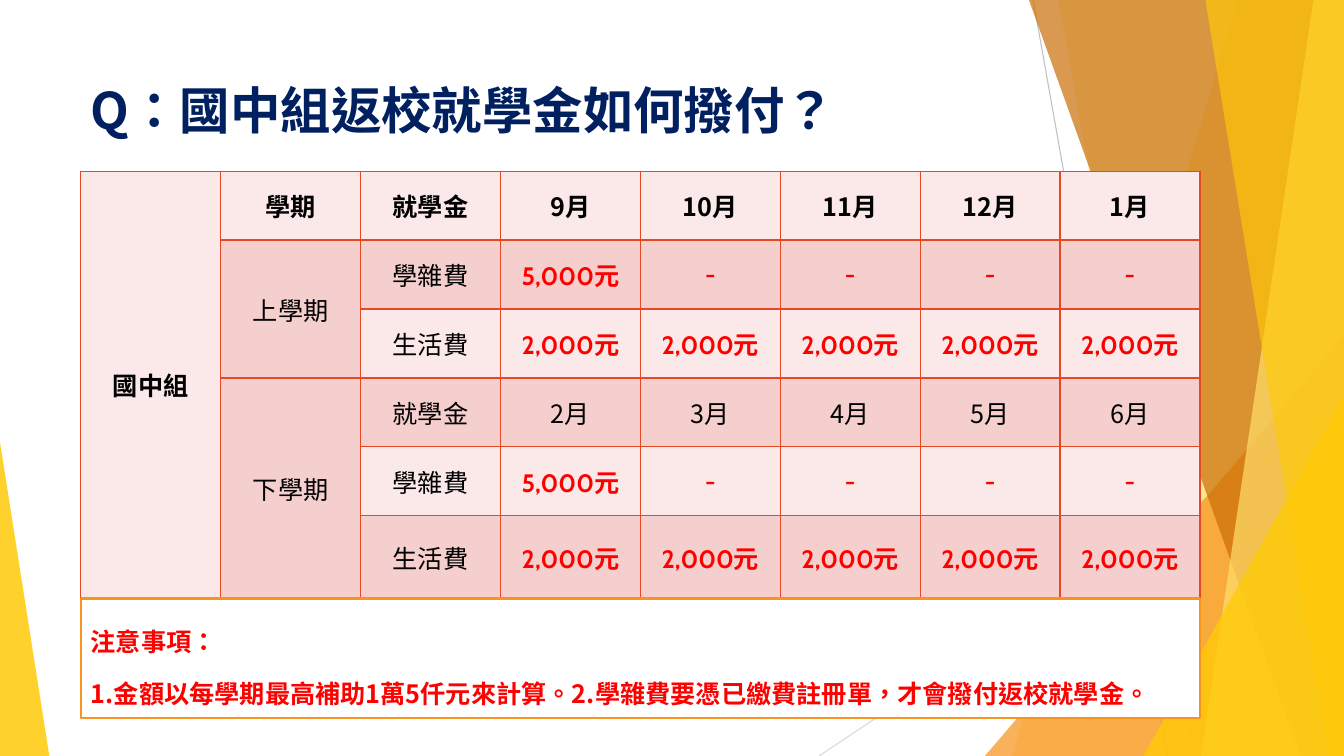
from dataclasses import dataclass
from typing import Any, NamedTuple

from lxml.etree import SubElement
from pptx import Presentation
from pptx.dml.color import RGBColor
from pptx.enum.shapes import MSO_CONNECTOR, MSO_SHAPE
from pptx.enum.text import MSO_ANCHOR, PP_ALIGN
from pptx.oxml.ns import qn
from pptx.util import Pt

EMU_PER_PX = 9525
SLIDE_WIDTH, SLIDE_HEIGHT = 1280, 720


@dataclass(frozen=True)
class Theme:
    font: str = "Noto Sans CJK SC"
    amount_font: str = "Cabin"
    white: str = "FFFFFF"
    black: str = "000000"
    navy: str = "002060"
    red: str = "FF0000"
    border: str = "E64823"
    band_light: str = "FAE9E8"
    band_dark: str = "F5CFCD"
    gold: str = "FFCA08"
    pale_gold: str = "FFDF6B"
    orange: str = "F8931D"
    brown: str = "CA6F06"
    title_size: int = 36
    body_size: int = 18


THEME = Theme()


class Ray(NamedTuple):
    start: tuple[int, int]
    end: tuple[int, int]
    color: str


class Band(NamedTuple):
    """Panel along the right edge, from its slanted left side to the slide edge."""
    top_x: int
    bottom_x: int
    color: str
    opacity: int


class Corner(NamedTuple):
    """Triangle standing on the bottom edge, apex at 0 (left) or 1 (right)."""
    left: int
    top: int
    width: int
    apex: int
    color: str
    opacity: int


DECORATION = [
    Ray((984, 0), (1112, 720), "BFBFBF"),
    Ray((1280, 387), (780, 720), "D9D9D9"),
    Band(1179, 964, THEME.gold, 30),
    Band(1008, 1136, THEME.gold, 20),
    Corner(938, 320, 342, 1, THEME.orange, 72),
    Band(980, 1239, THEME.brown, 70),
    Band(1251, 1144, THEME.pale_gold, 70),
    Band(1148, 1265, THEME.gold, 65),
    Corner(1089, 377, 191, 1, THEME.gold, 80),
    Corner(0, 421, 47, 0, THEME.gold, 85),
]

TITLE = "Q：國中組返校就學金如何撥付？"
TUITION = ["學雜費", "5,000元"] + ["-"] * 4
LIVING = ["生活費"] + ["2,000元"] * 5
GRANT_ROWS = [
    ["國中組", "學期", "就學金", "9月", "10月", "11月", "12月", "1月"],
    ["", "上學期", *TUITION],
    ["", "", *LIVING],
    ["", "下學期", "就學金", "2月", "3月", "4月", "5月", "6月"],
    ["", "", *TUITION],
    ["", "", *LIVING],
]
MERGES = [((0, 0), (5, 0)), ((1, 1), (2, 1)), ((3, 1), (5, 1))]
NOTES = [
    "注意事項：",
    "1.金額以每學期最高補助1萬5仟元來計算。2.學雜費要憑已繳費註冊單，才會撥付返校就學金。",
]
LEFT, WIDTH = 77, 1066
TABLE_TOP, TABLE_HEIGHT, LAST_ROW_HEIGHT = 163, 394, 79


def px(*lengths: int) -> list[int]:
    return [length * EMU_PER_PX for length in lengths]


def apply_format(target: Any, values: dict[str, Any]) -> None:
    for name, value in values.items():
        setattr(target, name, value)


def write(paragraph: Any, text: str, size: int, color: str, bold: bool,
          font: str = THEME.font) -> None:
    run = paragraph.add_run()
    run.text = text
    apply_format(run.font, {"name": font, "size": Pt(size), "bold": bold})
    run.font.color.rgb = RGBColor.from_string(color)
    properties = run.font._element
    properties.set("lang", "zh-TW")
    SubElement(properties, qn("a:ea"), typeface=THEME.font)


def fill_shape(shape: Any, color: str, opacity: int = 100) -> None:
    shape.shadow.inherit = False
    shape.fill.solid()
    shape.fill.fore_color.rgb = RGBColor.from_string(color)
    shape.line.fill.background()
    if opacity < 100:
        color_element = shape._element.spPr.find(qn("a:solidFill"))[0]
        SubElement(color_element, qn("a:alpha"), val=str(opacity * 1000))


def draw_ray(slide: Any, ray: Ray) -> None:
    connector = slide.shapes.add_connector(
        MSO_CONNECTOR.STRAIGHT, *px(*ray.start, *ray.end))
    connector.line.color.rgb = RGBColor.from_string(ray.color)
    connector.line.width = Pt(0.75)
    SubElement(connector._element.spPr, qn("a:effectLst"))


def draw_band(slide: Any, band: Band) -> None:
    builder = slide.shapes.build_freeform(band.top_x, 0, EMU_PER_PX)
    builder.add_line_segments([(SLIDE_WIDTH, 0), (SLIDE_WIDTH, SLIDE_HEIGHT),
                               (band.bottom_x, SLIDE_HEIGHT)])
    fill_shape(builder.convert_to_shape(), band.color, band.opacity)


def draw_corner(slide: Any, corner: Corner) -> None:
    shape = slide.shapes.add_shape(
        MSO_SHAPE.ISOSCELES_TRIANGLE,
        *px(corner.left, corner.top, corner.width, SLIDE_HEIGHT - corner.top))
    shape.adjustments[0] = corner.apex
    fill_shape(shape, corner.color, corner.opacity)


def draw_title(slide: Any) -> None:
    frame = slide.shapes.add_textbox(*px(LEFT, 71, 1104, 139)).text_frame
    frame.word_wrap = True
    write(frame.paragraphs[0], TITLE, THEME.title_size, THEME.navy, True)


def add_borders(cell: Any) -> None:
    properties = cell._tc.get_or_add_tcPr()
    for position, side in enumerate(("lnL", "lnR", "lnT", "lnB")):
        line = properties.makeelement(qn(f"a:{side}"), {"w": str(Pt(1))})
        properties.insert(position, line)
        fill = SubElement(line, qn("a:solidFill"))
        SubElement(fill, qn("a:srgbClr"), val=THEME.border)


def draw_grants(slide: Any) -> None:
    row_count, column_count = len(GRANT_ROWS), len(GRANT_ROWS[0])
    table = slide.shapes.add_table(
        row_count, column_count,
        *px(LEFT, TABLE_TOP, WIDTH, TABLE_HEIGHT)).table
    apply_format(table, {"first_row": False, "horz_banding": False})
    for column in table.columns:
        column.width = WIDTH * EMU_PER_PX // column_count
    for row in table.rows:
        row.height = TABLE_HEIGHT * EMU_PER_PX // row_count
    table.rows[row_count - 1].height = LAST_ROW_HEIGHT * EMU_PER_PX
    for start, end in MERGES:
        table.cell(*start).merge(table.cell(*end))
    for row_index, texts in enumerate(GRANT_ROWS):
        for column_index, text in enumerate(texts):
            cell = table.cell(row_index, column_index)
            dark = row_index % 2 and column_index
            cell.fill.solid()
            cell.fill.fore_color.rgb = RGBColor.from_string(
                THEME.band_dark if dark else THEME.band_light)
            cell.vertical_anchor = MSO_ANCHOR.MIDDLE
            add_borders(cell)
            if not text:
                continue
            paragraph = cell.text_frame.paragraphs[0]
            paragraph.alignment = PP_ALIGN.CENTER
            if text == "-" or text.endswith("元"):
                write(paragraph, text, THEME.body_size, THEME.red, True,
                      THEME.amount_font)
            else:
                write(paragraph, text, THEME.body_size, THEME.black,
                      row_index == 0)


def draw_notes(slide: Any) -> None:
    box = slide.shapes.add_shape(MSO_SHAPE.RECTANGLE, *px(LEFT, 570, WIDTH, 114))
    fill_shape(box, THEME.white)
    box.line.color.rgb = RGBColor.from_string(THEME.orange)
    box.line.width = Pt(1.5)
    frame = box.text_frame
    apply_format(frame, {"word_wrap": True, "vertical_anchor": MSO_ANCHOR.MIDDLE})
    for index, text in enumerate(NOTES):
        paragraph = frame.add_paragraph() if index else frame.paragraphs[0]
        apply_format(paragraph, {"alignment": PP_ALIGN.LEFT, "line_spacing": 1.6,
                                 "space_before": Pt(3 if index else 0)})
        write(paragraph, text, THEME.body_size, THEME.red, True)


def main() -> None:
    presentation = Presentation()
    presentation.slide_width, presentation.slide_height = px(SLIDE_WIDTH, SLIDE_HEIGHT)
    slide = presentation.slides.add_slide(presentation.slide_layouts[6])
    painters = {Ray: draw_ray, Band: draw_band, Corner: draw_corner}
    for part in DECORATION:
        painters[type(part)](slide, part)
    draw_title(slide)
    draw_grants(slide)
    draw_notes(slide)
    presentation.save("out.pptx")


if __name__ == "__main__":
    main()
